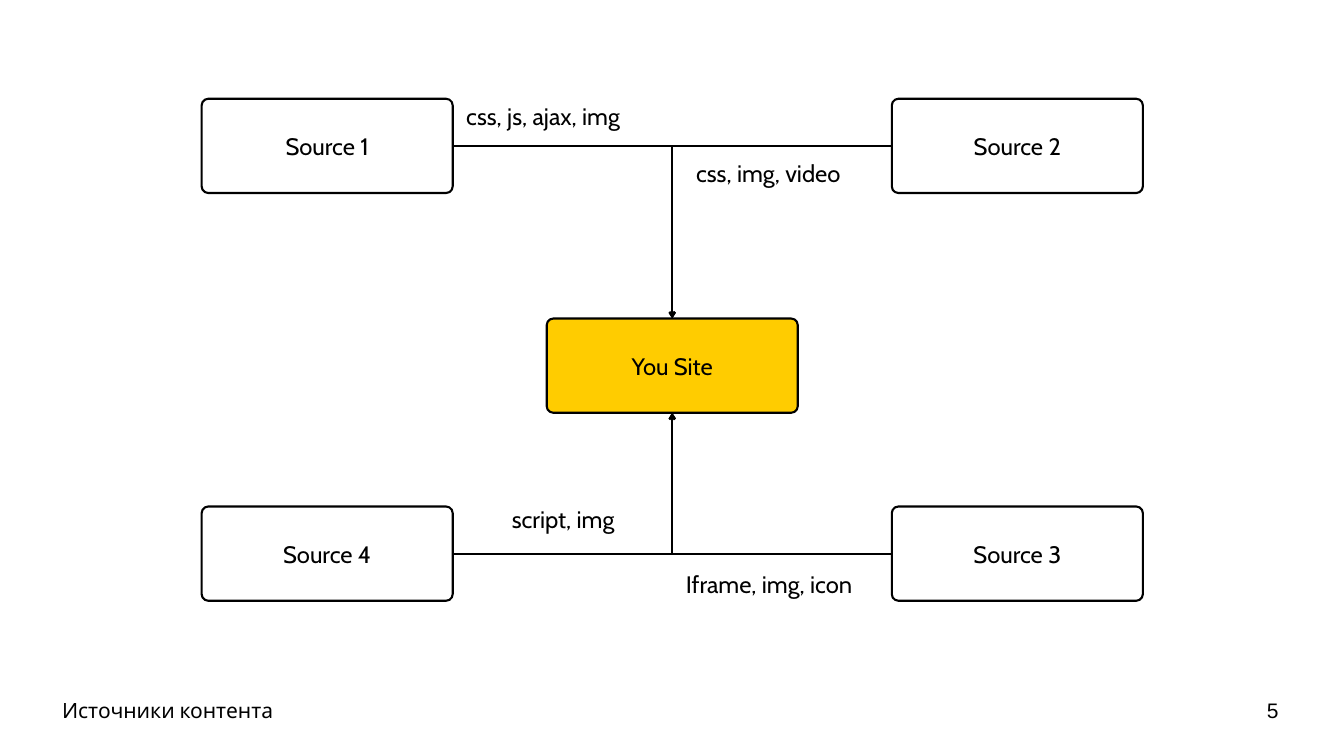
import pptx
import pptx.util
import pptx.dml.color
import pptx.enum.shapes
import pptx.enum.text
import pptx.oxml.ns
import lxml.etree

Inches = pptx.util.Inches
Align = pptx.enum.text.PP_ALIGN
BLACK, WHITE, YELLOW = "000000", "FFFFFF", "FFCC00"
TOP, LEFT, BOTTOM, RIGHT = range(4)
NODE_WIDTH, NODE_HEIGHT = 4.98, 1.87


def color(hex_value):
    return pptx.dml.color.RGBColor.from_string(hex_value)


def write_text(shape, text, size=34, font="Cabin", align=Align.LEFT, fill=BLACK,
               insets=(0.1, 0.05, 0.1, 0.05), wrap=True,
               anchor=pptx.enum.text.MSO_ANCHOR.MIDDLE):
    frame = shape.text_frame
    frame.auto_size = pptx.enum.text.MSO_AUTO_SIZE.NONE
    frame.word_wrap = wrap
    frame.vertical_anchor = anchor
    frame.margin_left, frame.margin_top, frame.margin_right, frame.margin_bottom = map(Inches, insets)
    para = frame.paragraphs[0]
    para.alignment = align
    span = para.add_run()
    span.text = text
    span.font.size = pptx.util.Pt(size)
    span.font.name = font
    span.font.color.rgb = color(fill)


def add_node(page, text, left, top, fill=WHITE):
    node = page.shapes.add_shape(pptx.enum.shapes.MSO_SHAPE.ROUNDED_RECTANGLE,
                                 *map(Inches, (left, top, NODE_WIDTH, NODE_HEIGHT)))
    node.adjustments[0] = 0.07
    node.shadow.inherit = False
    node.fill.solid()
    node.fill.fore_color.rgb = color(fill)
    node.line.color.rgb = color(BLACK)
    node.line.width = pptx.util.Pt(3)
    write_text(node, text, align=Align.CENTER, insets=(0.17, 0.4, 0.17, 0.4))
    return node


def add_elbow_arrow(page, source, source_side, target, target_side):
    arrow = page.shapes.add_connector(pptx.enum.shapes.MSO_CONNECTOR.ELBOW, 0, 0, 0, 0)
    arrow.begin_connect(source, source_side)
    arrow.end_connect(target, target_side)
    arrow.line.color.rgb = color(BLACK)
    arrow.line.width = pptx.util.Pt(3)
    qn = pptx.oxml.ns.qn
    properties = arrow.element.spPr
    properties.find(qn("a:prstGeom")).set("prst", "bentConnector2")
    lxml.etree.SubElement(properties.find(qn("a:ln")), qn("a:tailEnd"), type="arrow")
    lxml.etree.SubElement(properties, qn("a:effectLst"))


def add_label(page, text, left, top, width, align=Align.LEFT):
    label = page.shapes.add_textbox(*map(Inches, (left, top, width, 0.75)))
    write_text(label, text, align=align, wrap=False, anchor=pptx.enum.text.MSO_ANCHOR.TOP)


def add_diagram(page, left, top, width, height):
    right = left + width - NODE_WIDTH
    low = top + height - NODE_HEIGHT
    site = add_node(page, "You Site", (left + right) / 2, top + 4.36, YELLOW)
    sources = [
        ("Source 1", left, top, RIGHT, TOP),
        ("Source 2", right, top, LEFT, TOP),
        ("Source 3", right, low, LEFT, BOTTOM),
        ("Source 4", left, low, RIGHT, BOTTOM),
    ]
    for text, node_left, node_top, source_side, site_side in sources:
        node = add_node(page, text, node_left, node_top)
        add_elbow_arrow(page, node, source_side, site, site_side)
    add_label(page, "css, js, ajax, img", left + 5.15, top, 4.05)
    add_label(page, "css, img, video", left + 9.71, top + 1.13, 3.76)
    add_label(page, "Iframe, img, icon", left + 9.13, low + 1.2, 4.25, Align.CENTER)
    add_label(page, "script, img", left + 5.78, low - 0.09, 2.78, Align.CENTER)


def add_footer(page, left, top, width, height):
    number_width = 1.29
    title = page.shapes.title
    title.left, title.top, title.width, title.height = map(Inches, (left, top, 21.27, height))
    write_text(title, "Источники контента", size=30, insets=(0, 0.05, 0.1, 0.05))
    number = page.shapes.add_textbox(
        *map(Inches, (left + width - number_width, top, number_width, height)))
    write_text(number, "5", size=30, font="Arial", align=Align.RIGHT)


def main():
    deck = pptx.Presentation()
    deck.slide_width, deck.slide_height = Inches(26.66), Inches(15)
    page = deck.slides.add_slide(deck.slide_layouts[5])
    add_footer(page, 1.23, 13.88, 24.23, 0.43)
    add_diagram(page, 4, 1.96, 18.67, 9.96)
    deck.save("out.pptx")


if __name__ == "__main__":
    main()
